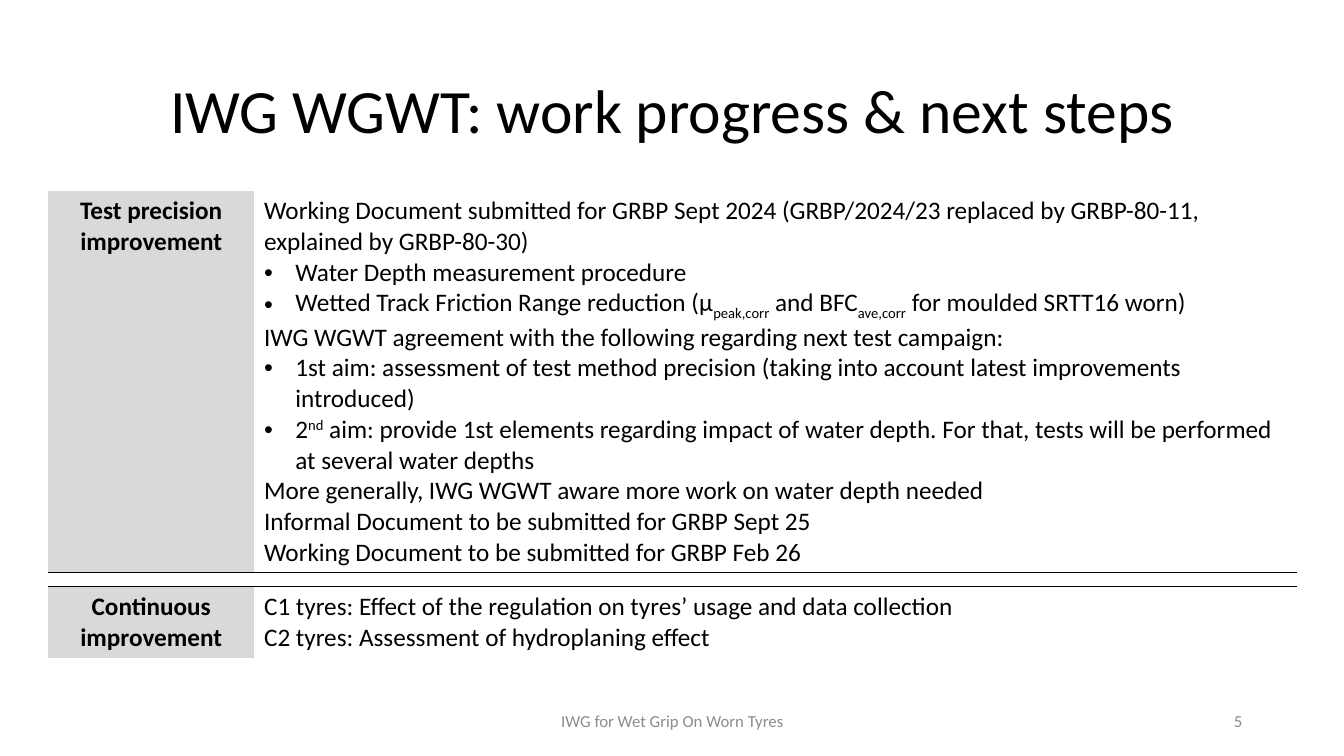
from dataclasses import dataclass

from lxml.etree import SubElement
from pptx import Presentation
from pptx.dml.color import RGBColor
from pptx.enum.text import MSO_ANCHOR, PP_ALIGN
from pptx.oxml.ns import qn
from pptx.util import Inches, Pt


@dataclass(frozen=True)
class Theme:
    font: str = "Calibri"
    black: str = "000000"
    grey: str = "8C8C8C"
    label_fill: str = "D9D9D9"
    title_size: int = 44
    body_size: int = 18
    footer_size: int = 12
    spacer_size: int = 1


THEME = Theme()
NO_GRID_STYLE = "{2D5ABB26-0587-4C30-8999-92F81FD0307C}"
SUBSCRIPT, SUPERSCRIPT = -25000, 30000
BULLET_INDENT = Inches(0.31)

# Each paragraph is (bulleted, pieces); a piece is text or (text, baseline)
PRECISION = [
    (False, ["Working Document submitted for GRBP Sept 2024 (GRBP/2024/23 "
             "replaced by GRBP-80-11, explained by GRBP-80-30)"]),
    (True, ["Water Depth measurement procedure"]),
    (True, ["Wetted Track Friction Range reduction (µ", ("peak,corr", SUBSCRIPT),
            " and BFC", ("ave,corr", SUBSCRIPT), " for moulded SRTT16 worn)"]),
    (False, ["IWG WGWT agreement with the following regarding next test campaign:"]),
    (True, ["1st aim: assessment of test method precision (taking into account "
            "latest improvements introduced)"]),
    (True, ["2", ("nd", SUPERSCRIPT), " aim: provide 1st elements regarding impact "
            "of water depth. For that, tests will be performed at several water depths"]),
    (False, ["More generally, IWG WGWT aware more work on water depth needed"]),
    (False, ["Informal Document to be submitted for GRBP Sept 25"]),
    (False, ["Working Document to be submitted for GRBP Feb 26"]),
]
CONTINUOUS = [
    (False, ["C1 tyres: Effect of the regulation on tyres’ usage and data collection"]),
    (False, ["C2 tyres: Assessment of hydroplaning effect"]),
]


def style_span(span, size, color=THEME.black, bold=False):
    span.font.name = THEME.font
    span.font.size = Pt(size)
    span.font.bold = bold
    span.font.color.rgb = RGBColor.from_string(color)


def add_text(page, text, left, top, width, height, size, color, align):
    box = page.shapes.add_textbox(Inches(left), Inches(top), Inches(width), Inches(height))
    frame = box.text_frame
    frame.word_wrap = True
    frame.vertical_anchor = MSO_ANCHOR.MIDDLE
    frame.text = text
    para = frame.paragraphs[0]
    para.alignment = align
    style_span(para.runs[0], size, color)
    return para


def add_bullet(para):
    properties = para._p.get_or_add_pPr()
    properties.set("marL", str(BULLET_INDENT))
    properties.set("indent", str(-BULLET_INDENT))
    SubElement(properties, qn("a:buFont"), typeface="Arial")
    SubElement(properties, qn("a:buChar"), char="•")


def fill_label(cell, text):
    cell.text_frame.text = text
    para = cell.text_frame.paragraphs[0]
    para.alignment = PP_ALIGN.CENTER
    style_span(para.runs[0], THEME.body_size, bold=True)
    cell.fill.solid()
    cell.fill.fore_color.rgb = RGBColor.from_string(THEME.label_fill)


def fill_details(cell, content):
    frame = cell.text_frame
    for index, (bulleted, pieces) in enumerate(content):
        para = frame.add_paragraph() if index else frame.paragraphs[0]
        if bulleted:
            add_bullet(para)
        for piece in pieces:
            text, baseline = (piece, 0) if isinstance(piece, str) else piece
            span = para.add_run()
            span.text = text
            style_span(span, THEME.body_size)
            if baseline:
                span.font._element.set("baseline", str(baseline))
    cell.fill.background()


def shrink_empty(cell):
    para = cell.text_frame.paragraphs[0]
    SubElement(para._p, qn("a:endParaRPr"), sz=str(THEME.spacer_size * 100))
    cell.margin_top = cell.margin_bottom = Inches(0.05)
    cell.fill.background()


def add_border(cell, side):
    properties = cell._tc.get_or_add_tcPr()
    line = properties.makeelement(qn(f"a:{side}"), {"w": str(Pt(1))})
    fill = SubElement(line, qn("a:solidFill"))
    SubElement(fill, qn("a:srgbClr"), val=THEME.black)
    properties.insert(0, line)


def add_progress_table(page):
    widths, heights = (2.04, 10.34), (3.79, 0.14, 0.71)
    frame = page.shapes.add_table(len(heights), len(widths), Inches(0.48), Inches(1.89),
                                  Inches(sum(widths)), Inches(sum(heights)))
    table = frame.table
    table.first_row = table.horz_banding = False
    table._tbl.tblPr.find(qn("a:tableStyleId")).text = NO_GRID_STYLE
    for column, width in zip(table.columns, widths):
        column.width = Inches(width)
    for row, height in zip(table.rows, heights):
        row.height = Inches(height)

    # Topic rows
    topics = {0: ("Test precision improvement", PRECISION),
              2: ("Continuous improvement", CONTINUOUS)}
    for row, (label, content) in topics.items():
        fill_label(table.cell(row, 0), label)
        fill_details(table.cell(row, 1), content)

    # Ruled spacer between the topics
    for column in range(len(widths)):
        shrink_empty(table.cell(1, column))
        add_border(table.cell(0, column), "lnB")
        add_border(table.cell(1, column), "lnT")


def main():
    deck = Presentation()
    deck.slide_width, deck.slide_height = Inches(13.33), Inches(7.5)
    page = deck.slides.add_slide(deck.slide_layouts[6])

    # Title
    title = add_text(page, "IWG WGWT: work progress & next steps", 0.92, 0.4, 11.5, 1.45,
                     THEME.title_size, THEME.black, PP_ALIGN.CENTER)
    title.line_spacing = 0.9

    # Progress table
    add_progress_table(page)

    # Footer and page number
    add_text(page, "IWG for Wet Grip On Worn Tyres", 4.42, 6.95, 4.5, 0.4,
             THEME.footer_size, THEME.grey, PP_ALIGN.CENTER)
    add_text(page, "5", 9.42, 6.95, 3, 0.4,
             THEME.footer_size, THEME.grey, PP_ALIGN.RIGHT)

    deck.save("out.pptx")


if __name__ == "__main__":
    main()
